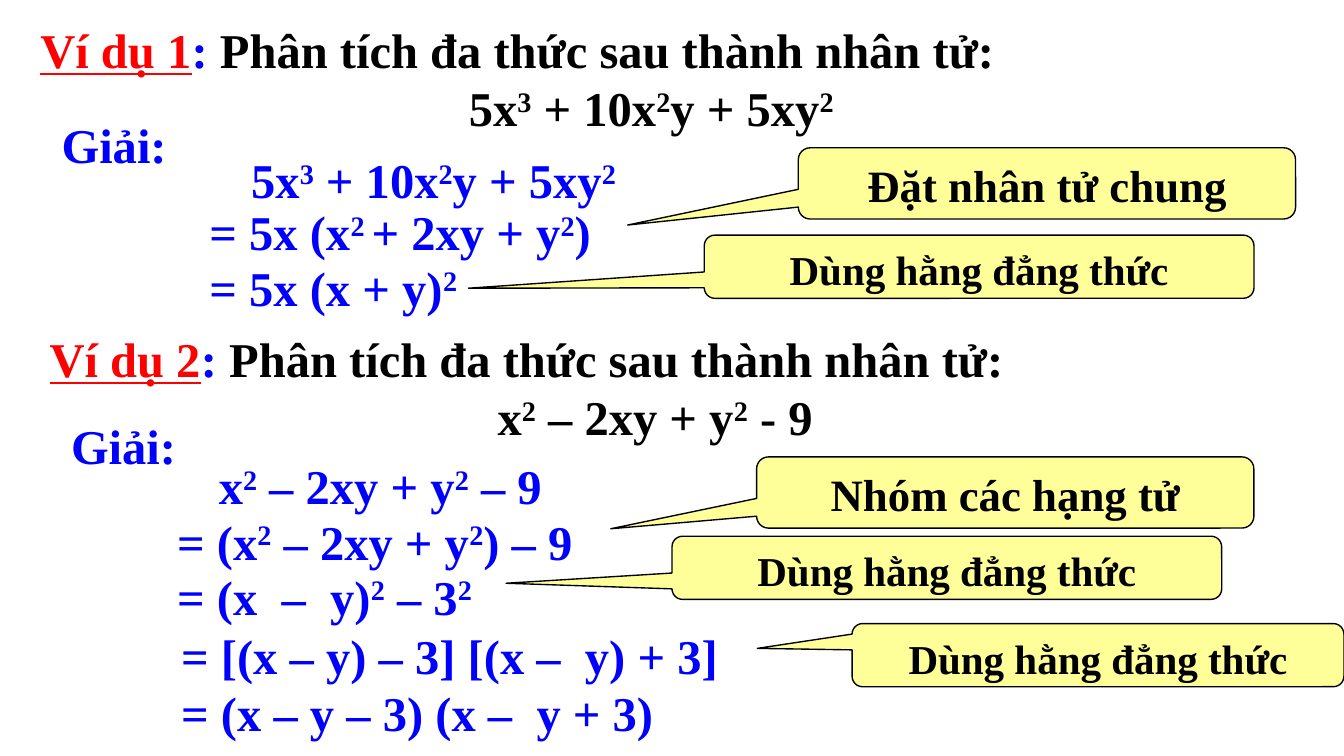
from dataclasses import dataclass

from pptx import Presentation
from pptx.dml.color import RGBColor
from pptx.enum.shapes import MSO_SHAPE
from pptx.enum.text import MSO_ANCHOR as Anchor, MSO_AUTO_SIZE as AutoSize, PP_ALIGN as Align
from pptx.util import Inches, Pt

CELL = Inches(0.1)  # the slide is a grid of 100 columns by 56.25 rows
COLS, ROWS = 100, 56.25
LINE_ROWS = 5.4


@dataclass(frozen=True)
class Theme:
    font: str = "Times New Roman"
    body: int = 26
    callout: int = 24
    callout_small: int = 22
    text: RGBColor = RGBColor(0, 0, 0)
    label: RGBColor = RGBColor(0xFF, 0, 0)
    work: RGBColor = RGBColor(0, 0, 0xFF)
    note: RGBColor = RGBColor(0xFF, 0xFF, 0x99)


THEME = Theme()

# left, top, width, text
WORK = [
    (3.6, 8.05, 9.9, "Giải:"),
    (17.7, 10.7, 29.9, "5x^3^ + 10x^2^y + 5xy^2^"),
    (14.6, 14.55, 31.1, "= 5x (x^2 ^+ 2xy + y^2^)"),
    (14.6, 18.7, 20.8, "= 5x (x + y)^2^"),
    (4.3, 30.5, 9.9, "Giải:"),
    (15.3, 33.45, 26.6, "x^2^ – 2xy + y^2^ – 9"),
    (12.2, 37.6, 32, "= (x^2^ – 2xy + y^2^) – 9"),
    (12.2, 41.7, 24.4, "= (x  –  y)^2^ – 3^2^"),
    (12.5, 46.1, 42.3, "= [(x – y) – 3] [(x –  y) + 3]"),
    (12.5, 50.35, 37.5, "= (x – y – 3) (x –  y + 3)"),
]

IDENTITY = "Dùng hằng đẳng thức"
SMALL, LARGE = (4.7, THEME.callout_small), (5.3, THEME.callout)
# left, top, width, (height, type size), tip column, tip row, text
CALLOUTS = [
    (52.4, 17.5, 40.9, SMALL, 34.85, 21.45, IDENTITY),
    (59.4, 11, 37, LARGE, 46.7, 16.75, "Đặt nhân tử chung"),
    (56.3, 34, 37, LARGE, 45.45, 39.35, "Nhóm các hạng tử"),
    (50, 39.9, 40.9, SMALL, 37.65, 43.4, IDENTITY),
    (63.4, 46.4, 36.6, SMALL, 56.35, 48.25, IDENTITY),
]


def cells(*counts):
    return [round(n * CELL) for n in counts]


def add_run(p, text, color, size=THEME.body, underline=False, raised=False):
    r = p.add_run()
    r.text = text
    f = r.font
    f.name, f.size, f.bold = THEME.font, Pt(size), True
    f.color.rgb = color
    if underline:
        f.underline = True
    if raised:
        r._r.get_or_add_rPr().set("baseline", "30000")


def add_formula(p, text, color):
    """Write text in which each exponent stands between two carets."""
    for i, part in enumerate(text.split("^")):
        if part:
            add_run(p, part, color, raised=i % 2 == 1)


def fill_heading(sp, label, formula):
    tf = sp.text_frame
    tf.word_wrap = True
    tf.auto_size = AutoSize.NONE
    tf.vertical_anchor = Anchor.TOP
    p = tf.paragraphs[0]
    p.alignment = Align.JUSTIFY
    add_run(p, label, THEME.label, underline=True)
    add_run(p, ": ", THEME.work)
    add_run(p, "Phân tích đa thức sau thành nhân tử:", THEME.text)
    p = tf.add_paragraph()
    p.alignment = Align.CENTER
    add_formula(p, formula, THEME.text)


def add_work_line(s, left, top, width, text):
    tf = s.shapes.add_textbox(*cells(left, top, width, LINE_ROWS)).text_frame
    tf.word_wrap = False
    tf.auto_size = AutoSize.SHAPE_TO_FIT_TEXT
    add_formula(tf.paragraphs[0], text, THEME.work)


def add_callout(s, left, top, width, kind, tip_col, tip_row, text):
    height, size = kind
    sp = s.shapes.add_shape(MSO_SHAPE.ROUNDED_RECTANGULAR_CALLOUT,
                            *cells(left, top, width, height))
    sp.adjustments[0] = (tip_col - left) / width - 0.5
    sp.adjustments[1] = (tip_row - top) / height - 0.5
    sp.shadow.inherit = False
    sp.fill.solid()
    sp.fill.fore_color.rgb = THEME.note
    sp.line.color.rgb = THEME.text
    sp.line.width = Pt(0.75)
    tf = sp.text_frame
    tf.word_wrap = True
    tf.vertical_anchor = Anchor.TOP
    p = tf.paragraphs[0]
    p.alignment = Align.CENTER
    add_run(p, text, THEME.text, size)


def main():
    prs = Presentation()
    prs.slide_width, prs.slide_height = cells(COLS, ROWS)
    s = prs.slides.add_slide(prs.slide_layouts.get_by_name("Title Only"))

    title = s.shapes.title
    title.left, title.top, title.width, title.height = cells(2, 1, 92.9, 14.5)
    fill_heading(title, "Ví dụ 1", "5x^3^ + 10x^2^y + 5xy^2^")
    second = s.shapes.add_textbox(*cells(2.7, 24, 92.1, 9.8))
    fill_heading(second, "Ví dụ 2", "x^2^ – 2xy + y^2^ - 9")

    for line in WORK:
        add_work_line(s, *line)
    for callout in CALLOUTS:
        add_callout(s, *callout)
    prs.save("out.pptx")


if __name__ == "__main__":
    main()
